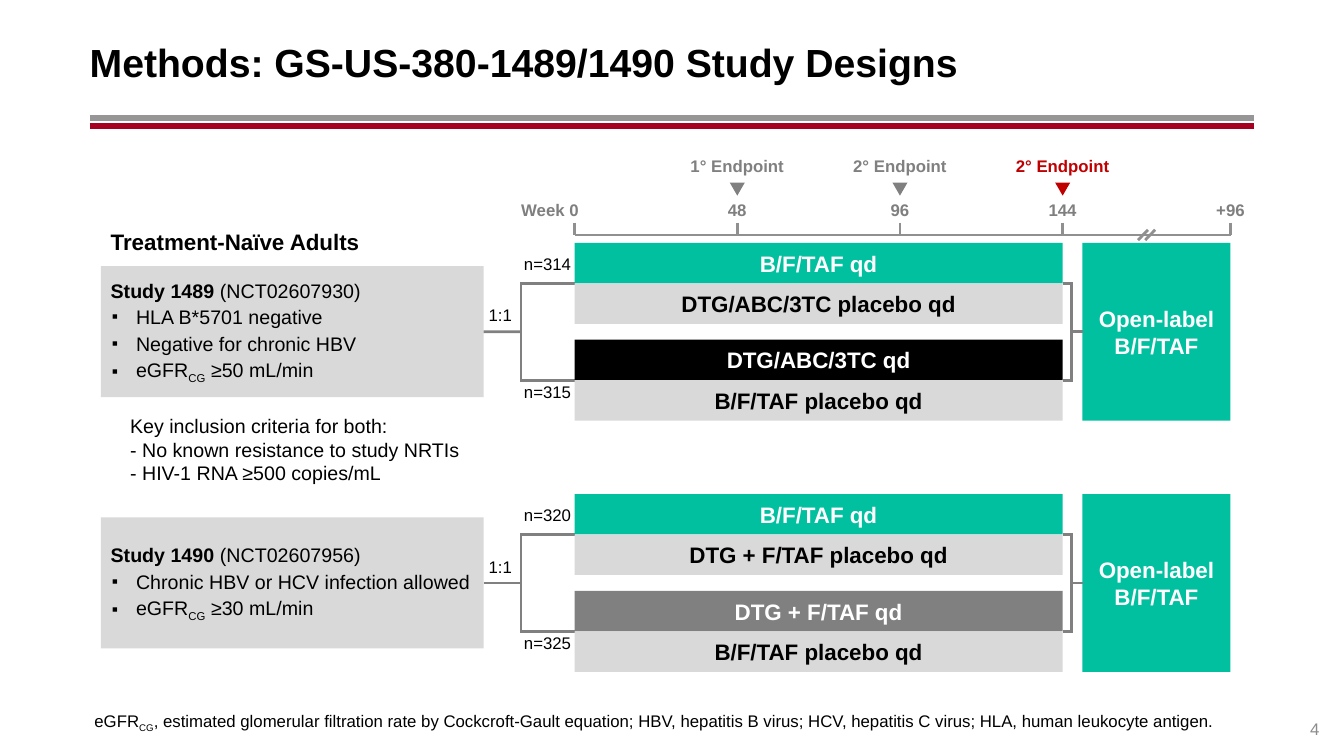
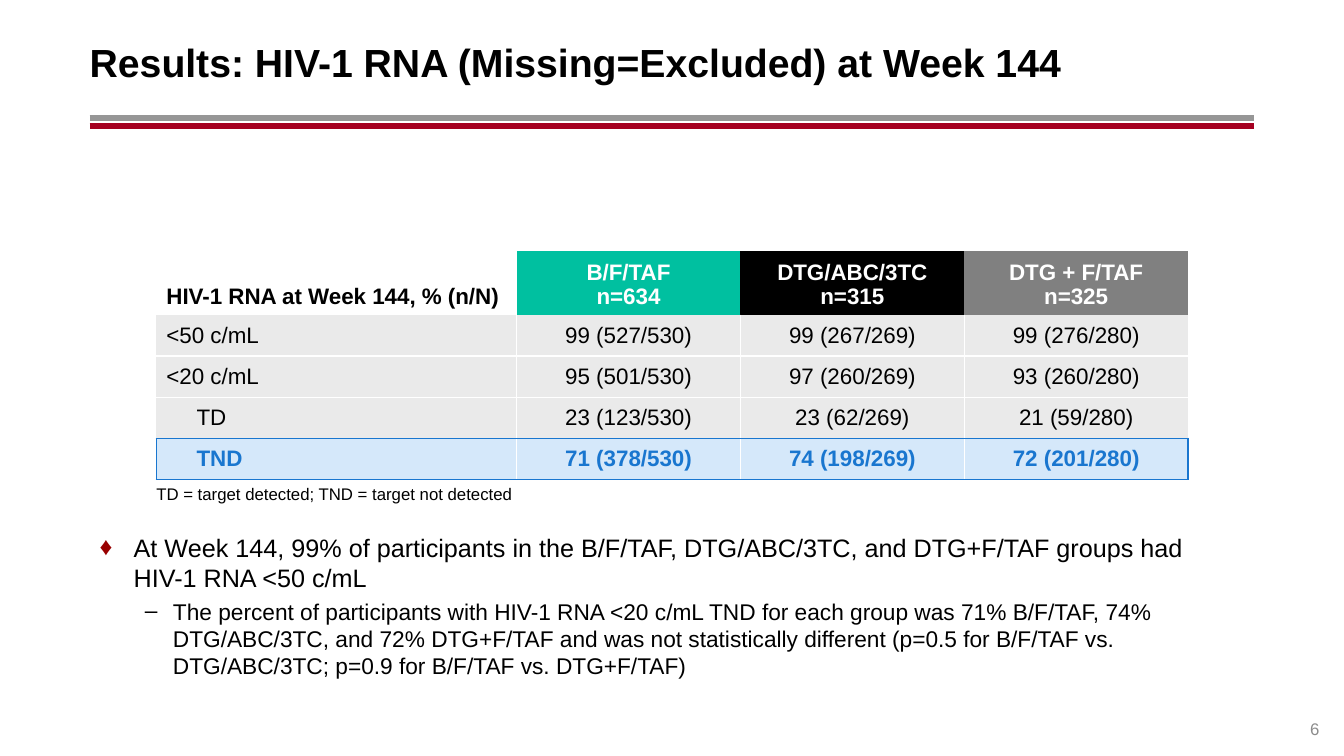
from dataclasses import dataclass
from typing import NamedTuple, Optional

from lxml import etree
from pptx import Presentation
from pptx import util as u
from pptx.dml.color import RGBColor
from pptx.enum import shapes, text
from pptx.oxml import ns

LEFT, CENTER, RIGHT = text.PP_ALIGN.LEFT, text.PP_ALIGN.CENTER, text.PP_ALIGN.RIGHT
TOP, MIDDLE, BOTTOM = text.MSO_ANCHOR.TOP, text.MSO_ANCHOR.MIDDLE, text.MSO_ANCHOR.BOTTOM


@dataclass(frozen=True)
class Theme:
    font: str = "Arial"
    black: str = "000000"
    white: str = "FFFFFF"
    teal: str = "00C0A0"
    grey: str = "808080"
    panel: str = "D9D9D9"
    axis: str = "909090"
    week: str = "7F7F7F"
    accent: str = "C00000"
    rule_grey: str = "969696"
    rule_red: str = "A50021"
    page: str = "8C8C8C"
    diamond: str = "990000"
    row: str = "EAEAEA"
    highlight: str = "D5E8FA"
    blue: str = "1976CF"
    title: float = 28
    lead: float = 18
    sub: float = 16.2
    label: float = 16
    body: float = 14
    small: float = 12


T = Theme()


class Box(NamedTuple):
    left: float
    top: float
    width: float
    height: float

    def lengths(self) -> list:
        return [u.Cm(side) for side in self]


class Run(NamedTuple):
    words: str
    bold: Optional[bool] = None
    subscript: bool = False


class Bullet(NamedTuple):
    mark: str
    percent: int = 100
    color: str = T.black


@dataclass(frozen=True)
class Para:
    runs: tuple
    size: float = T.small
    color: str = T.black
    bold: bool = False
    align: int = LEFT
    margin: float = 0
    indent: float = 0
    before: float = 0
    spacing: float = 1.0
    bullet: Optional[Bullet] = None


class Study(NamedTuple):
    top: float
    criteria: tuple
    counts: tuple
    bars: tuple


class Week(NamedTuple):
    x: float
    label: str
    shift: float = 0
    endpoint: str = ""
    color: str = T.grey


def rgb(value: str) -> RGBColor:
    return RGBColor.from_string(value)


def line_of(words: str, **style) -> Para:
    return Para((Run(words),), **style)


def add_bullet(properties, bullet: Bullet) -> None:
    color = etree.SubElement(properties, ns.qn("a:buClr"))
    etree.SubElement(color, ns.qn("a:srgbClr"), val=bullet.color)
    etree.SubElement(properties, ns.qn("a:buSzPct"), val=str(bullet.percent * 1000))
    etree.SubElement(properties, ns.qn("a:buFont"), typeface=T.font)
    etree.SubElement(properties, ns.qn("a:buChar"), char=bullet.mark)


def write(frame, paras, anchor=MIDDLE, insets=None) -> None:
    frame.word_wrap = True
    frame.vertical_anchor = anchor
    if insets is not None:
        (frame.margin_left, frame.margin_top,
         frame.margin_right, frame.margin_bottom) = map(u.Cm, insets)
    fill_paragraphs(frame, paras)


def fill_paragraphs(frame, paras) -> None:
    for index, para in enumerate(paras):
        target = frame.add_paragraph() if index else frame.paragraphs[0]
        properties = target._p.get_or_add_pPr()
        properties.set("marL", str(u.Cm(para.margin)))
        properties.set("indent", str(u.Cm(para.indent)))
        if para.bullet:
            add_bullet(properties, para.bullet)
        target.alignment = para.align
        target.space_before = u.Pt(para.before)
        target.line_spacing = para.spacing
        font = target.font
        font.name, font.size, font.bold = T.font, u.Pt(para.size), para.bold
        font.color.rgb = rgb(para.color)
        for part in para.runs:
            run = target.add_run()
            run.text = part.words
            if part.bold is not None:
                run.font.bold = part.bold
            if part.subscript:
                run._r.get_or_add_rPr().set("baseline", "-25000")


def add_text(slide, box: Box, *paras: Para, anchor=MIDDLE, insets=(0, 0, 0, 0)) -> None:
    write(slide.shapes.add_textbox(*box.lengths()).text_frame, paras, anchor, insets)


def add_block(slide, box: Box, fill: str, *paras: Para, kind=shapes.MSO_SHAPE.RECTANGLE, insets=None):
    block = slide.shapes.add_shape(kind, *box.lengths())
    block.shadow.inherit = False
    block.fill.solid()
    block.fill.fore_color.rgb = rgb(fill)
    block.line.fill.background()
    write(block.text_frame, paras, insets=insets)
    return block


def add_line(slide, x1: float, y1: float, x2: float, y2: float, color: str = T.grey, width: float = 2):
    line = slide.shapes.add_connector(
        shapes.MSO_CONNECTOR.STRAIGHT, *map(u.Cm, (x1, y1, x2, y2)))
    line.line.color.rgb = rgb(color)
    line.line.width = u.Pt(width)
    etree.SubElement(line._element.spPr, ns.qn("a:effectLst"))
    return line


def add_page(deck, heading: str, number: int):
    slide = deck.slides.add_slide(deck.slide_layouts[5])
    for y, color in ((2.97, T.rule_grey), (3.18, T.rule_red)):
        add_line(slide, 2.26, y, 31.6, y, color, 4.25)
    title = slide.shapes.title
    title.left, title.top, title.width, title.height = Box(2.26, 0.46, 29.34, 2.18).lengths()
    title.text_frame.auto_size = text.MSO_AUTO_SIZE.NONE
    write(title.text_frame, [line_of(heading, size=T.title, bold=True)], insets=(0, 0.13, 0.25, 0.13))
    add_text(slide, Box(31.6, 17.6, 1.65, 1.02),
             line_of(str(number), color=T.page, align=RIGHT), anchor=BOTTOM)
    return slide


BAR_LEFT, BAR_WIDTH, BAR_HEIGHT, PAIR_STEP = 14.48, 12.3, 1.02, 2.44
BAR_RIGHT = BAR_LEFT + BAR_WIDTH
MID = BAR_HEIGHT + PAIR_STEP / 2
FORK_X, JOIN_X, OPEN_LEFT, OPEN_WIDTH = 13.13, 27.0, 27.28, 3.73
CRITERIA_LEFT, CRITERIA_WIDTH, CRITERIA_HEIGHT = 2.54, 9.65, 3.3
WEEK_STEP, AXIS_Y, TICK = 4.1, 5.92, 0.31
AXIS_END = OPEN_LEFT + OPEN_WIDTH

WEEKS = (
    Week(BAR_LEFT, "Week 0", shift=-0.62),
    Week(BAR_LEFT + WEEK_STEP, "48", endpoint="1° Endpoint"),
    Week(BAR_LEFT + 2 * WEEK_STEP, "96", endpoint="2° Endpoint"),
    Week(BAR_RIGHT, "144", endpoint="2° Endpoint", color=T.accent),
    Week(AXIS_END, "+96"),
)


def study_name(name: str, registry: str) -> Para:
    return Para((Run(f"{name} ", True), Run(registry)), size=T.body, before=2)


def criterion(*runs: Run) -> Para:
    return Para(runs, size=T.body, margin=0.64, indent=-0.61, before=2, bullet=Bullet("▪", 90))


def egfr(limit: str) -> Para:
    return criterion(Run("eGFR"), Run("CG", subscript=True), Run(f" {limit} mL/min"))


STUDIES = (
    Study(6.12,
          (study_name("Study 1489", "(NCT02607930)"), criterion(Run("HLA B*5701 negative")),
           criterion(Run("Negative for chronic HBV")), egfr("≥50")),
          ("n=314", "n=315"),
          (("B/F/TAF qd", T.teal), ("DTG/ABC/3TC placebo qd", T.panel),
           ("DTG/ABC/3TC qd", T.black), ("B/F/TAF placebo qd", T.panel))),
    Study(12.45,
          (study_name("Study 1490", "(NCT02607956)"),
           criterion(Run("Chronic HBV or HCV infection allowed")), egfr("≥30")),
          ("n=320", "n=325"),
          (("B/F/TAF qd", T.teal), ("DTG + F/TAF placebo qd", T.panel),
           ("DTG + F/TAF qd", T.grey), ("B/F/TAF placebo qd", T.panel))),
)


def add_study(slide, study: Study) -> None:
    middle = study.top + MID
    arms = [study.top + BAR_HEIGHT, study.top + BAR_HEIGHT + PAIR_STEP]
    criteria = add_block(
        slide, Box(CRITERIA_LEFT, middle - CRITERIA_HEIGHT / 2, CRITERIA_WIDTH, CRITERIA_HEIGHT),
        T.panel, *study.criteria, insets=(0.25, 0.13, 0, 0.13))
    open_label = add_block(
        slide, Box(OPEN_LEFT, study.top, OPEN_WIDTH, 2 * MID), T.teal,
        line_of("Open-label B/F/TAF", size=T.label, color=T.white, bold=True, align=CENTER))
    add_line(slide, CRITERIA_LEFT + CRITERIA_WIDTH, middle, FORK_X, middle).begin_connect(criteria, 3)
    add_line(slide, JOIN_X, middle, OPEN_LEFT, middle).end_connect(open_label, 1)
    for x, bar_edge, overlap in ((FORK_X, BAR_LEFT, -0.03), (JOIN_X, BAR_RIGHT, 0.03)):
        add_line(slide, x, arms[0], x, arms[1])
        for arm in arms:
            add_line(slide, x + overlap, arm, bar_edge, arm)
    for index, (treatment, fill) in enumerate(study.bars):
        pair, row = divmod(index, 2)
        add_block(slide,
                  Box(BAR_LEFT, study.top + pair * PAIR_STEP + row * BAR_HEIGHT, BAR_WIDTH, BAR_HEIGHT),
                  fill,
                  line_of(treatment, size=T.label, bold=True, align=CENTER,
                          color=T.black if fill == T.panel else T.white))
    for count, offset in zip(study.counts, (0.28, 3.5)):
        add_text(slide, Box(13, study.top + offset, 1.6, 0.51), line_of(count, align=CENTER))
    add_text(slide, Box(12.16, study.top + 1.57, 0.9, 0.51), line_of("1:1", align=CENTER))


def add_timeline(slide) -> None:
    add_line(slide, BAR_LEFT, AXIS_Y, AXIS_END, AXIS_Y, T.axis)
    for week in WEEKS:
        add_line(slide, week.x, AXIS_Y - TICK, week.x, AXIS_Y, T.axis)
        add_text(slide, Box(week.x + week.shift - 1.23, 4.9, 2.46, 0.76),
                 line_of(week.label, color=T.week, bold=True, align=CENTER))
        if week.endpoint:
            add_text(slide, Box(week.x - 1.45, 3.86, 2.9, 0.71),
                     line_of(week.endpoint, color=week.color, bold=True, align=CENTER, spacing=0.9))
            marker = add_block(slide, Box(week.x - 0.19, 4.6, 0.38, 0.33), week.color,
                               kind=shapes.MSO_SHAPE.ISOSCELES_TRIANGLE)
            marker.rotation = 180
    for x in (28.68, 28.86):
        add_line(slide, x + 0.25, AXIS_Y - 0.13, x, AXIS_Y + 0.13, T.axis)


def add_methods(deck) -> None:
    slide = add_page(deck, "Methods: GS-US-380-1489/1490 Study Designs", 4)
    add_timeline(slide)
    for study in STUDIES:
        add_study(slide, study)
    add_text(slide, Box(2.54, 5.61, 10, 0.94),
             line_of("Treatment-Naïve Adults", size=T.label, bold=True), insets=(0.25, 0.13, 0.25, 0.13))
    add_text(slide, Box(3.28, 10.44, 9.6, 2.41),
             *(line_of(words, size=T.body) for words in (
                 "Key inclusion criteria for both:", "- No known resistance to study NRTIs",
                 "- HIV-1 RNA ≥500 copies/mL")), anchor=TOP)
    add_text(slide, Box(2.26, 17.86, 29.34, 0.76),
             Para((Run("eGFR"), Run("CG", subscript=True),
                   Run(", estimated glomerular filtration rate by Cockcroft-Gault equation; HBV, hepatitis B "
                       "virus; HCV, hepatitis C virus; HLA, human leukocyte antigen."))),
             anchor=BOTTOM, insets=(0.12, 0.13, 0, 0.13))


GROUPS = (("B/F/TAF", "n=634", T.teal), ("DTG/ABC/3TC", "n=315", T.black), ("DTG + F/TAF", "n=325", T.grey))
OUTCOMES = (
    ("<50 c/mL", "99 (527/530)", "99 (267/269)", "99 (276/280)"),
    ("<20 c/mL", "95 (501/530)", "97 (260/269)", "93 (260/280)"),
    ("TD", "23 (123/530)", "23 (62/269)", "21 (59/280)"),
    ("TND", "71 (378/530)", "74 (198/269)", "72 (201/280)"),
)


def set_cell(cell, paras, anchor=MIDDLE, fill: str = "", borders=()) -> None:
    fill_paragraphs(cell.text_frame, paras)
    cell.vertical_anchor = anchor
    if fill:
        cell.fill.solid()
        cell.fill.fore_color.rgb = rgb(fill)
    else:
        cell.fill.background()
    properties = cell._tc.get_or_add_tcPr()
    drawn = [(side, color) for side, color in borders if color]
    for index, (side, color) in enumerate(drawn):
        edge = etree.Element(ns.qn(f"a:ln{side}"), w=str(u.Pt(1)))
        solid = etree.SubElement(edge, ns.qn("a:solidFill"))
        etree.SubElement(solid, ns.qn("a:srgbClr"), val=color)
        properties.insert(index, edge)


def add_outcomes(slide) -> None:
    columns, rows = len(GROUPS) + 1, len(OUTCOMES) + 1
    table = slide.shapes.add_table(rows, columns, *Box(3.94, 6.32, 26, 5.67).lengths()).table
    table.first_row = table.horz_banding = False
    table._tbl.tblPr.find(ns.qn("a:tableStyleId")).text = "{2D5ABB26-0587-4C30-8999-92F81FD0307C}"
    for index, column in enumerate(table.columns):
        column.width = u.Cm(5.64 if index else 9.08)
    for index, row in enumerate(table.rows):
        row.height = u.Cm(1.04 if index else 1.51)
    set_cell(table.cell(0, 0), [line_of("HIV-1 RNA at Week 144, % (n/N)", size=T.label, bold=True)], BOTTOM)
    for index, (*heading, fill) in enumerate(GROUPS, 1):
        set_cell(table.cell(0, index),
                 [line_of(words, size=T.label, color=T.white, bold=True, align=CENTER) for words in heading],
                 BOTTOM, fill)
    for r, outcome in enumerate(OUTCOMES, 1):
        marked = r == rows - 1
        outer = T.blue if marked else ""
        above = T.blue if marked else T.white if r > 1 else ""
        below = T.blue if r >= rows - 2 else T.white
        for c, words in enumerate(outcome):
            borders = (("L", T.white if c else outer), ("R", T.white if c < columns - 1 else outer),
                       ("T", above), ("B", below))
            para = line_of(words, size=T.label, color=T.blue if marked else T.black, bold=marked,
                           align=CENTER if c else LEFT, margin=0 if c or r < 3 else 0.76)
            set_cell(table.cell(r, c), [para], MIDDLE, T.highlight if marked else T.row, borders)


def add_results(deck) -> None:
    slide = add_page(deck, "Results: HIV-1 RNA (Missing=Excluded) at Week 144", 6)
    add_outcomes(slide)
    add_text(slide, Box(3.94, 12.1, 21.5, 0.6),
             line_of("TD = target detected; TND = target not detected"), anchor=BOTTOM)
    add_text(slide, Box(2.26, 13.28, 29.3, 4.2),
             line_of("At Week 144, 99% of participants in the B/F/TAF, DTG/ABC/3TC, and DTG+F/TAF groups had "
                     "HIV-1 RNA <50 c/mL", size=T.lead, margin=0.86, indent=-0.86,
                     bullet=Bullet("♦", color=T.diamond)),
             line_of("The percent of participants with HIV-1 RNA <20 c/mL TND for each group was 71% B/F/TAF, "
                     "74% DTG/ABC/3TC, and 72% DTG+F/TAF and was not statistically different (p=0.5 for "
                     "B/F/TAF vs. DTG/ABC/3TC; p=0.9 for B/F/TAF vs. DTG+F/TAF)", size=T.sub,
                     margin=1.85, indent=-0.71, before=3.5, bullet=Bullet("–")),
             anchor=TOP, insets=(0.25, 0.13, 0.25, 0.13))


def main() -> None:
    deck = Presentation()
    deck.slide_width, deck.slide_height = u.Cm(33.87), u.Cm(19.05)
    add_methods(deck)
    add_results(deck)
    deck.save("out.pptx")


if __name__ == "__main__":
    main()
